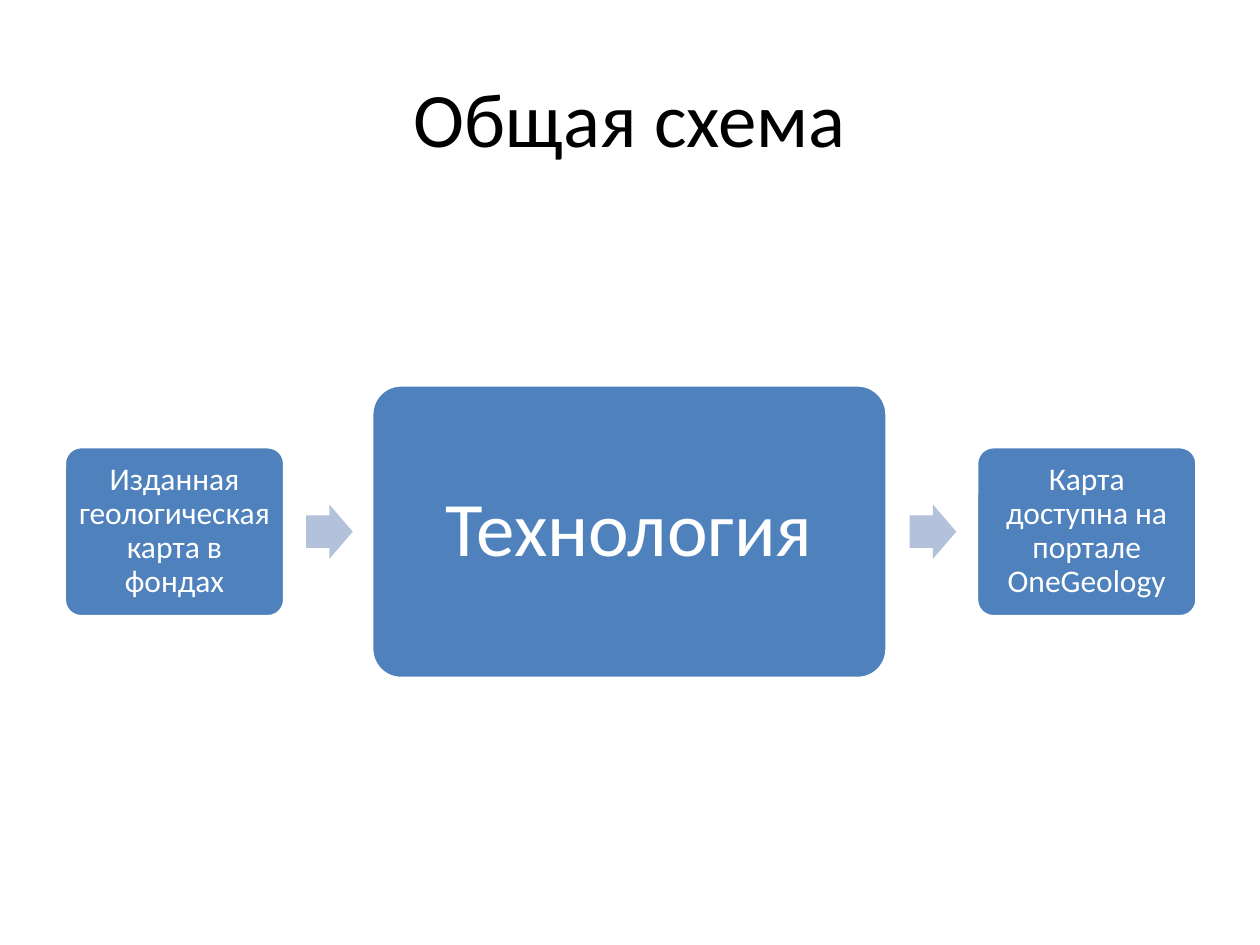
from dataclasses import dataclass

import pptx
import pptx.dml.color
import pptx.enum.shapes
import pptx.enum.text
import pptx.util

Inches = pptx.util.Inches
Pt = pptx.util.Pt
RGBColor = pptx.dml.color.RGBColor
Shapes = pptx.enum.shapes.MSO_SHAPE


@dataclass(frozen=True)
class Theme:
    font: str = "Calibri"
    title_color: str = "000000"
    box_text_color: str = "FFFFFF"
    box_fill: str = "4F81BD"
    box_line: str = "FFFFFF"
    arrow_fill: str = "B3C1DB"
    large_size: int = 44
    small_size: int = 18
    line_width: int = 2


class SchemeSlide:
    def __init__(self, presentation, theme):
        self.theme = theme
        self.slide = presentation.slides.add_slide(presentation.slide_layouts[6])

    def add_text(self, shape, text, size, color, inset=None, line_spacing=None):
        """Put one centred paragraph into the shape."""
        frame = shape.text_frame
        frame.word_wrap = True
        frame.vertical_anchor = pptx.enum.text.MSO_ANCHOR.MIDDLE
        if inset is not None:
            frame.margin_left = frame.margin_right = Inches(inset)
            frame.margin_top = frame.margin_bottom = Inches(inset)
        paragraph = frame.paragraphs[0]
        paragraph.alignment = pptx.enum.text.PP_ALIGN.CENTER
        paragraph.line_spacing = line_spacing
        run = paragraph.add_run()
        run.text = text
        run.font.name = self.theme.font
        run.font.size = Pt(size)
        run.font.color.rgb = RGBColor.from_string(color)

    def add_title(self, text):
        box = self.slide.shapes.add_textbox(
            Inches(0.5), Inches(0.3), Inches(9), Inches(1.25))
        self.add_text(box, text, self.theme.large_size, self.theme.title_color)

    def add_centred_shape(self, kind, left, middle, width, height, fill):
        """Add a filled shape whose vertical centre is at middle."""
        shape = self.slide.shapes.add_shape(
            kind, Inches(left), Inches(middle - height / 2),
            Inches(width), Inches(height))
        shape.shadow.inherit = False
        shape.fill.solid()
        shape.fill.fore_color.rgb = RGBColor.from_string(fill)
        return shape

    def add_box(self, text, left, middle, width, height, size, inset):
        box = self.add_centred_shape(
            Shapes.ROUNDED_RECTANGLE, left, middle, width, height, self.theme.box_fill)
        box.adjustments[0] = 0.1
        box.line.color.rgb = RGBColor.from_string(self.theme.box_line)
        box.line.width = Pt(self.theme.line_width)
        self.add_text(box, text, size, self.theme.box_text_color, inset, 0.9)

    def add_arrow(self, left, middle):
        arrow = self.add_centred_shape(
            Shapes.RIGHT_ARROW, left, middle, 0.37, 0.43, self.theme.arrow_fill)
        arrow.adjustments[0] = 0.6
        arrow.adjustments[1] = 0.5
        arrow.line.fill.background()


def main():
    presentation = pptx.Presentation()
    presentation.slide_width = Inches(10)
    presentation.slide_height = Inches(7.5)
    theme = Theme()
    scheme = SchemeSlide(presentation, theme)
    scheme.add_title("Общая схема")

    middle = 4.22
    small_box = (1.75, 1.35, theme.small_size, 0.07)
    large_box = (4.09, 2.33, theme.large_size, 0.18)
    scheme.add_box("Изданная геологическая карта в фондах", 0.51, middle, *small_box)
    scheme.add_arrow(2.43, middle)
    scheme.add_box("Технология", 2.95, middle, *large_box)
    scheme.add_arrow(7.22, middle)
    scheme.add_box("Карта доступна на портале OneGeology", 7.75, middle, *small_box)

    presentation.save("out.pptx")


if __name__ == "__main__":
    main()
